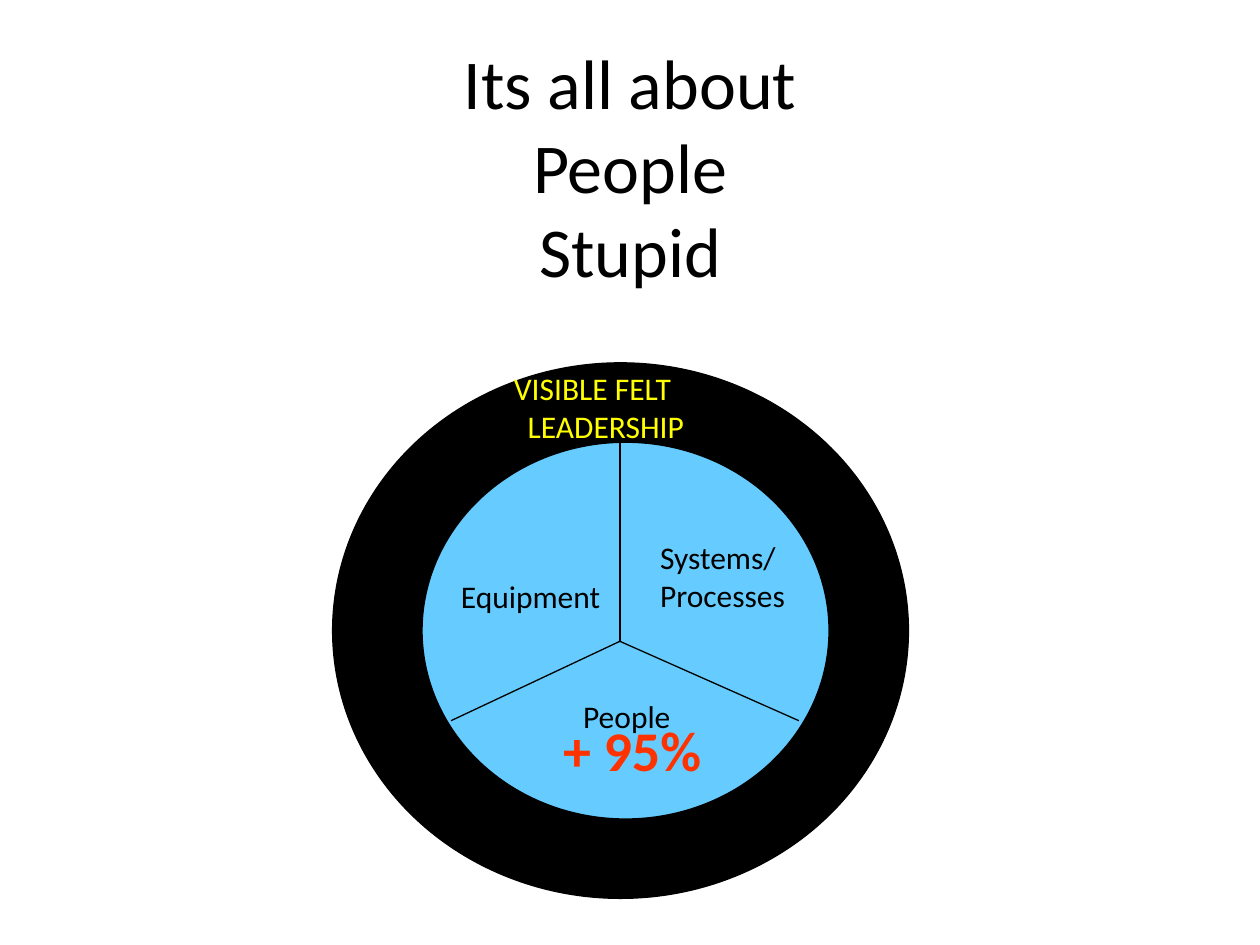
from lxml import etree
from pptx import Presentation
from pptx import util as u
from pptx.dml.color import RGBColor
from pptx.enum import shapes, text
from pptx.oxml.ns import qn

FONT = "Calibri"
COLORS = {
    "ink": "000000",
    "circle": "66CCFF",
    "leadership": "FFFF00",
    "share": "FF3300",
}


def color(name):
    return RGBColor.from_string(COLORS[name])


def format_text(frame, size, color_name, bold=False):
    for para in frame.paragraphs:
        for span in para.runs:
            span.font.name = FONT
            span.font.size = u.Pt(size)
            span.font.bold = bold
            span.font.color.rgb = color(color_name)


def set_title(page, words):
    title = page.shapes.title
    title.left, title.top = u.Inches(0.5), u.Inches(0.3)
    title.width, title.height = u.Inches(9), u.Inches(2.03)
    frame = title.text_frame
    frame.text = words
    frame.auto_size = text.MSO_AUTO_SIZE.NONE
    frame.vertical_anchor = text.MSO_ANCHOR.MIDDLE
    frame.paragraphs[0].alignment = text.PP_ALIGN.CENTER
    format_text(frame, 40, "ink")


def add_ellipse(page, left, top, width, height, fill):
    ellipse = page.shapes.add_shape(
        shapes.MSO_SHAPE.OVAL,
        u.Inches(left), u.Inches(top), u.Inches(width), u.Inches(height))
    ellipse.shadow.inherit = False
    ellipse.fill.solid()
    ellipse.fill.fore_color.rgb = color(fill)
    ellipse.line.color.rgb = color("ink")
    ellipse.line.width = u.Pt(0.75)


def add_divider(page, start, end):
    divider = page.shapes.add_connector(
        shapes.MSO_CONNECTOR.STRAIGHT, *map(u.Inches, start + end))
    divider.line.color.rgb = color("ink")
    divider.line.width = u.Pt(0.75)
    etree.SubElement(divider.element.spPr, qn("a:effectLst"))


def add_label(page, left, top, width, height, words,
              size=18, color_name="ink", bold=False, wrap=True):
    box = page.shapes.add_textbox(
        u.Inches(left), u.Inches(top), u.Inches(width), u.Inches(height))
    frame = box.text_frame
    frame.text = words
    frame.word_wrap = wrap
    frame.auto_size = text.MSO_AUTO_SIZE.SHAPE_TO_FIT_TEXT
    format_text(frame, size, color_name, bold)
    return frame


def main():
    deck = Presentation()
    deck.slide_width, deck.slide_height = u.Inches(10), u.Inches(7.5)
    page = deck.slides.add_slide(deck.slide_layouts[5])
    set_title(page, "Its all about\vPeople\vStupid")

    # Leadership ring around the inner circle
    add_ellipse(page, 2.64, 2.88, 4.57, 4.25, "ink")
    add_ellipse(page, 3.35, 3.51, 3.23, 2.99, "circle")

    # Dividers from the hub to the rim
    hub = (4.92, 5.09)
    for rim in ((4.92, 3.51), (3.58, 5.72), (6.34, 5.72)):
        add_divider(page, hub, rim)

    # Sector labels
    add_label(page, 3.56, 4.53, 1.42, 0.43, "Equipment", wrap=False)
    add_label(page, 5.14, 4.22, 1.28, 0.77, "Systems/\nProcesses", wrap=False)
    add_label(page, 4.53, 5.48, 1.1, 0.43, "People")

    # Ring label, second line slightly indented
    ring = add_label(page, 3.98, 2.88, 2.28, 0.7, "VISIBLE FELT\nLEADERSHIP",
                     color_name="leadership")
    properties = ring.paragraphs[1]._p.get_or_add_pPr()
    properties.set("marL", str(u.Inches(0.11)))

    # Share of people
    add_label(page, 4.37, 5.63, 1.59, 0.63, "+ 95%",
              size=32, color_name="share", bold=True)

    deck.save("out.pptx")


if __name__ == "__main__":
    main()
